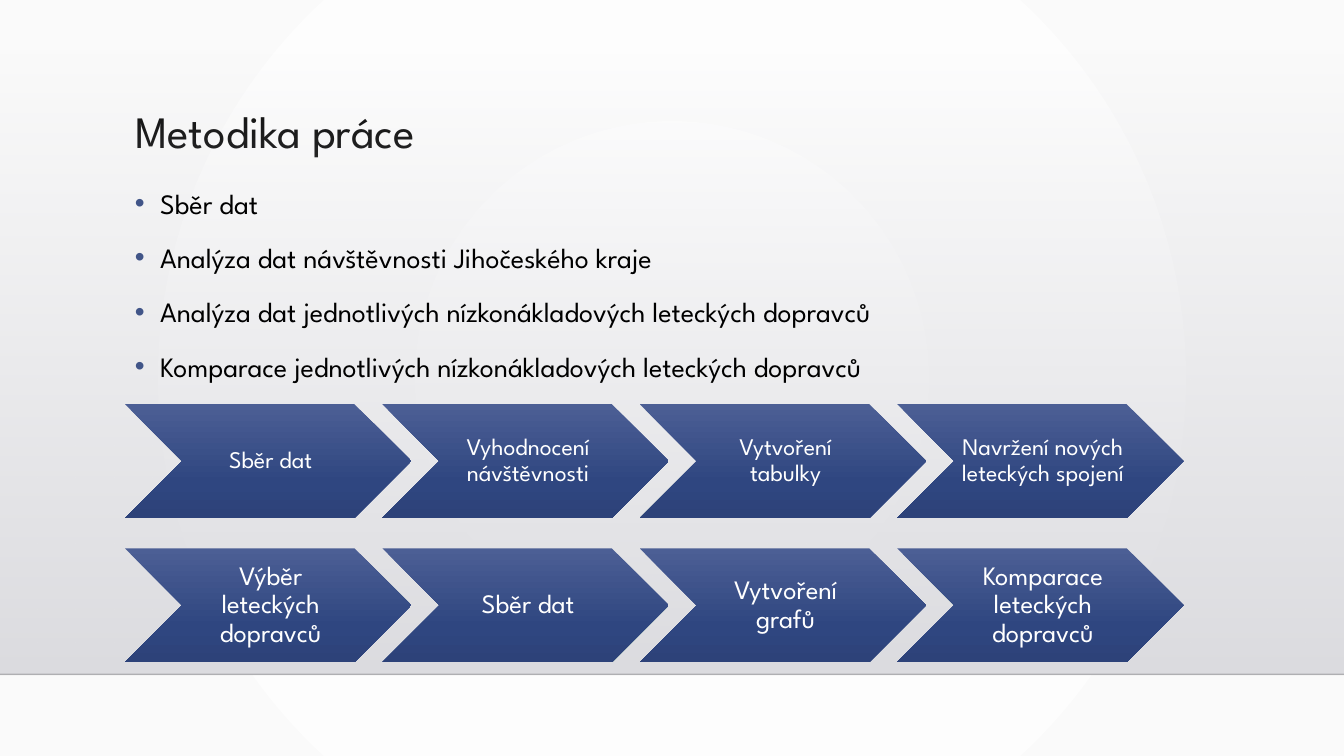
from lxml import etree
from pptx import Presentation
from pptx.dml.color import RGBColor
from pptx.enum import shapes, text
from pptx.oxml import ns, parse_xml
from pptx.util import Inches, Pt

TITLE = "Metodika práce"
BULLETS = [
    "Sběr dat",
    "Analýza dat návštěvnosti Jihočeského kraje",
    "Analýza dat jednotlivých nízkonákladových leteckých dopravců",
    "Komparace jednotlivých nízkonákladových leteckých dopravců",
]
PROCESSES = [
    {"top": 5.44, "size": 19, "left_inset": 0.08, "inset": 0.03,
     "steps": ["Výběr leteckých dopravců", "Sběr dat", "Vytvoření grafů",
               "Komparace leteckých dopravců"]},
    {"top": 4.01, "size": 17, "left_inset": 0.07, "inset": 0.02,
     "steps": ["Sběr dat", "Vyhodnocení návštěvnosti", "Vytvoření tabulky",
               "Navržení nových leteckých spojení"]},
]

FONT = "League Spartan"
BLACK = RGBColor(0x00, 0x00, 0x00)
WHITE = RGBColor(0xFF, 0xFF, 0xFF)
OFF_WHITE = RGBColor(0xFA, 0xFA, 0xFA)
PANEL_TOP = RGBColor(0xDC, 0xDC, 0xE0)
PANEL_BOTTOM = RGBColor(0xDE, 0xDE, 0xE2)
FLOOR_LINE = RGBColor(0x00, 0x00, 0x01)
BULLET_BLUE = RGBColor(0x41, 0x55, 0x88)
CHEVRON_STOPS = [(0, RGBColor(0x4C, 0x5F, 0x95), 100),
                 (69, RGBColor(0x2F, 0x46, 0x80), 100),
                 (100, RGBColor(0x2D, 0x42, 0x79), 100)]
DOWN = '<a:lin ang="5400000" scaled="0"/>'
RADIAL = ('<a:path path="circle"><a:fillToRect l="50000" t="50000" '
          'r="50000" b="50000"/></a:path>')

LEFT, CONTENT_W = 1.24, 10.5
CHEVRON_W, CHEVRON_H, PITCH = 2.84, 1.13, 2.553
FLOOR = 6.69


def gradient(fill, element, stops, direction):
    fill.solid()
    fill.fore_color.rgb = WHITE
    solid = next(element.iter(ns.qn("a:solidFill")))
    marks = "".join(
        f'<a:gs pos="{pos * 1000}"><a:srgbClr val="{color}">'
        f'<a:alpha val="{alpha * 1000}"/></a:srgbClr></a:gs>'
        for pos, color, alpha in stops)
    solid.getparent().replace(solid, parse_xml(
        f'<a:gradFill {ns.nsdecls("a")} rotWithShape="1">'
        f'<a:gsLst>{marks}</a:gsLst>{direction}</a:gradFill>'))


def apply(target, values):
    for name, value in values.items():
        setattr(target, name, value)


def write(p, words, size, color, **layout):
    apply(p, layout)
    r = p.add_run()
    r.text = words
    apply(r.font, {"size": Pt(size), "name": FONT})
    r.font.color.rgb = color


def add_shape(s, kind, box, stops):
    sp = s.shapes.add_shape(kind, *map(Inches, box))
    sp.shadow.inherit = False
    sp.line.fill.background()
    gradient(sp.fill, sp.element, stops, DOWN)
    return sp


def add_background(s):
    gradient(s.background.fill, s.element,
             [(0, WHITE, 100), (100, OFF_WHITE, 100)], RADIAL)
    add_shape(s, shapes.MSO_SHAPE.RECTANGLE, (0, 0.51, 13.33, FLOOR - 0.51),
              [(0, PANEL_TOP, 0), (100, PANEL_BOTTOM, 100)])
    line = s.shapes.add_connector(shapes.MSO_CONNECTOR.STRAIGHT, 0,
                                  Inches(FLOOR), Inches(13.33), Inches(FLOOR))
    line.line.width = Pt(1)
    line.line.color.rgb = FLOOR_LINE
    color = next(line.element.iter(ns.qn("a:srgbClr")))
    etree.SubElement(color, ns.qn("a:alpha")).set("val", "20000")
    etree.SubElement(line.element.spPr, ns.qn("a:effectLst"))


def add_title(s):
    title = s.shapes.title
    apply(title, {"left": Inches(LEFT), "top": Inches(1.04),
                  "width": Inches(CONTENT_W), "height": Inches(1.15)})
    tf = title.text_frame
    apply(tf, {"vertical_anchor": text.MSO_ANCHOR.TOP, "word_wrap": True,
               "auto_size": text.MSO_AUTO_SIZE.NONE})
    write(tf.paragraphs[0], TITLE, 32, BLACK,
          alignment=text.PP_ALIGN.LEFT, line_spacing=0.9)


def add_bullets(s):
    tf = s.shapes.add_textbox(*map(Inches, (LEFT, 1.73, CONTENT_W, 3.6))).text_frame
    tf.word_wrap = True
    for i, words in enumerate(BULLETS):
        p = tf.add_paragraph() if i else tf.paragraphs[0]
        write(p, words, 20, BLACK, line_spacing=1.2,
              space_before=Pt(10 if i else 0))
        pPr = p._p.get_or_add_pPr()
        pPr.set("marL", str(Inches(0.25)))
        pPr.set("indent", str(Inches(-0.25)))
        color = etree.SubElement(pPr, ns.qn("a:buClr"))
        etree.SubElement(color, ns.qn("a:srgbClr")).set("val", str(BULLET_BLUE))
        etree.SubElement(pPr, ns.qn("a:buFont")).set("typeface", "Arial")
        etree.SubElement(pPr, ns.qn("a:buChar")).set("char", "•")


def add_process(s, process):
    inset = Inches(process["inset"])
    for i, step in enumerate(process["steps"]):
        box = (LEFT + i * PITCH, process["top"], CHEVRON_W, CHEVRON_H)
        tf = add_shape(s, shapes.MSO_SHAPE.CHEVRON, box, CHEVRON_STOPS).text_frame
        apply(tf, {"margin_left": Inches(process["left_inset"]),
                   "margin_top": inset, "margin_right": inset,
                   "margin_bottom": inset, "word_wrap": True,
                   "vertical_anchor": text.MSO_ANCHOR.MIDDLE})
        write(tf.paragraphs[0], step, process["size"], WHITE,
              alignment=text.PP_ALIGN.CENTER, line_spacing=0.9)


def main():
    prs = Presentation()
    apply(prs, {"slide_width": Inches(13.33), "slide_height": Inches(7.5)})
    s = prs.slides.add_slide(prs.slide_layouts.get_by_name("Title Only"))
    add_background(s)
    add_title(s)
    add_bullets(s)
    for process in PROCESSES:
        add_process(s, process)
    prs.save("out.pptx")


if __name__ == "__main__":
    main()
